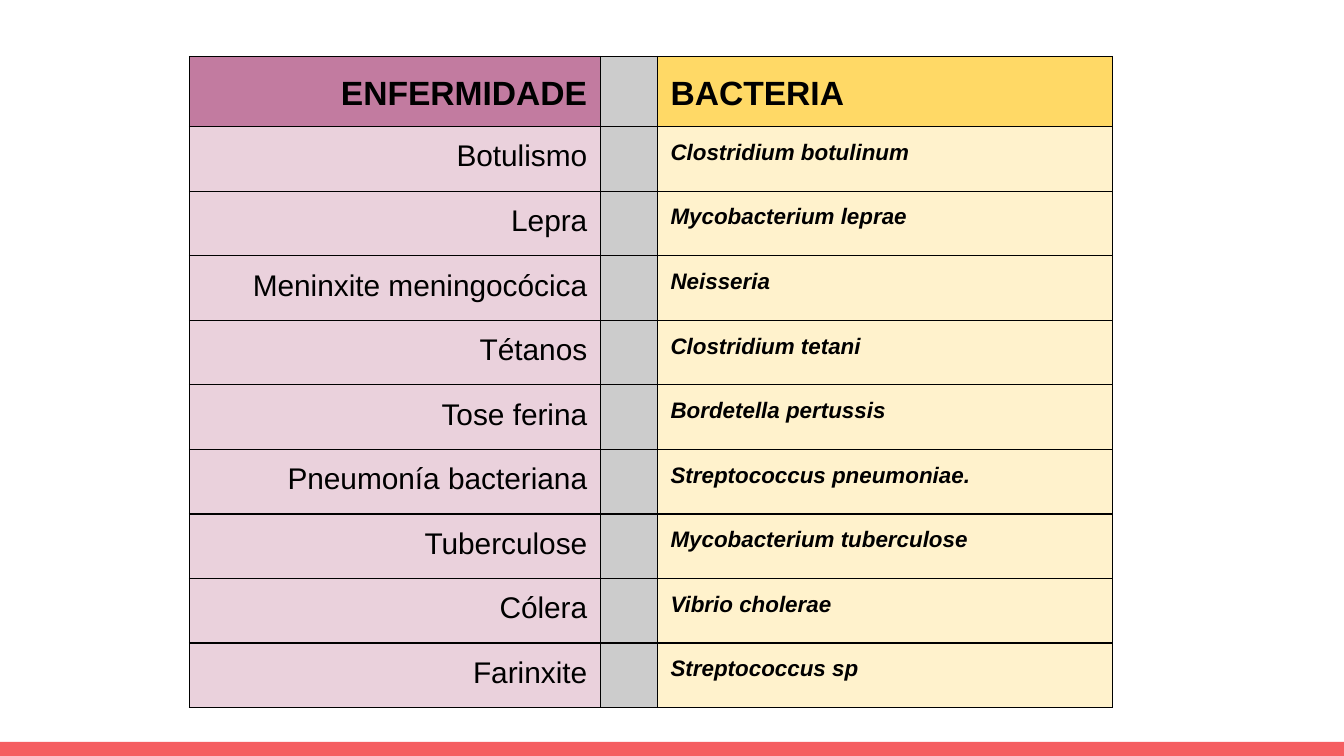
from dataclasses import dataclass

from lxml import etree
from pptx import Presentation
from pptx.dml.color import RGBColor
from pptx.enum.shapes import MSO_SHAPE
from pptx.enum.text import PP_ALIGN
from pptx.oxml.ns import qn
from pptx.util import Inches, Pt

RECT = MSO_SHAPE.RECTANGLE
LEFT, RIGHT = PP_ALIGN.LEFT, PP_ALIGN.RIGHT

HEADER = ("ENFERMIDADE", "", "BACTERIA")
DISEASES = [
    ("Botulismo", "Clostridium botulinum"),
    ("Lepra", "Mycobacterium leprae"),
    ("Meninxite meningocócica", "Neisseria"),
    ("Tétanos", "Clostridium tetani"),
    ("Tose ferina", "Bordetella pertussis"),
    ("Pneumonía bacteriana", "Streptococcus pneumoniae."),
    ("Tuberculose", "Mycobacterium tuberculose"),
    ("Cólera", "Vibrio cholerae"),
    ("Farinxite", "Streptococcus sp"),
]
COL_WIDTHS = (3.06, 0.42, 3.39)
ROW_HEIGHT = 0.44
TABLE_LEFT, TABLE_TOP = 1.41, 0.42
CELL_MARGIN = 0.1
SLIDE_W = 10
SLIDE_H = SLIDE_W * 9 / 16
BAR_TOP, BAR_H = 5.52, 0.11


@dataclass(frozen=True)
class Theme:
    font: str = "Arial"
    text: str = "000000"
    border: str = "000000"
    border_pt: float = 0.75
    bar: str = "F55E61"
    header_fills: tuple = ("C27BA0", "CCCCCC", "FFD966")
    body_fills: tuple = ("EAD1DC", "CCCCCC", "FFF2CC")
    header_pt: int = 18
    disease_pt: int = 16
    bacteria_pt: int = 12


THEME = Theme()


def set_fill(target, color):
    target.fill.solid()
    target.fill.fore_color.rgb = RGBColor.from_string(color)


def set_borders(cell):
    tc_pr = cell._tc.get_or_add_tcPr()
    for i, side in enumerate(("lnL", "lnR", "lnT", "lnB")):
        ln = etree.Element(qn(f"a:{side}"), w=str(Pt(THEME.border_pt)))
        solid = etree.SubElement(ln, qn("a:solidFill"))
        etree.SubElement(solid, qn("a:srgbClr"), val=THEME.border)
        tc_pr.insert(i, ln)


def set_empty_font(p):
    end = etree.SubElement(p._p, qn("a:endParaRPr"), sz=str(THEME.header_pt * 100))
    for tag in ("latin", "ea", "cs"):
        etree.SubElement(end, qn(f"a:{tag}"), typeface=THEME.font)


def add_run(p, text, size, bold, italic):
    r = p.add_run()
    r.text = text
    r.font.name = THEME.font
    r.font.size = Pt(size)
    r.font.bold = bold
    r.font.italic = italic
    r.font.color.rgb = RGBColor.from_string(THEME.text)


def fill_cell(cell, text, row, col):
    header = row == 0
    fills = THEME.header_fills if header else THEME.body_fills
    set_fill(cell, fills[col])
    set_borders(cell)
    cell.margin_left = cell.margin_right = Inches(CELL_MARGIN)
    cell.margin_top = cell.margin_bottom = Inches(CELL_MARGIN)
    p = cell.text_frame.paragraphs[0]
    if not text:
        set_empty_font(p)
        return
    p.alignment = RIGHT if col == 0 else LEFT
    if header:
        p.line_spacing = 1.15
        add_run(p, text, THEME.header_pt, True, False)
    elif col == 0:
        add_run(p, text, THEME.disease_pt, False, False)
    else:
        add_run(p, text, THEME.bacteria_pt, True, True)


def add_bar(s):
    sp = s.shapes.add_shape(RECT, 0, Inches(BAR_TOP), Inches(SLIDE_W), Inches(BAR_H))
    sp.shadow.inherit = False
    set_fill(sp, THEME.bar)
    sp.line.fill.background()


def add_disease_table(s):
    rows = [HEADER] + [(disease, "", bacteria) for disease, bacteria in DISEASES]
    table = s.shapes.add_table(
        len(rows), len(COL_WIDTHS), Inches(TABLE_LEFT), Inches(TABLE_TOP),
        Inches(sum(COL_WIDTHS)), Inches(ROW_HEIGHT * len(rows))).table
    table.first_row = table.horz_banding = False
    for column, width in zip(table.columns, COL_WIDTHS):
        column.width = Inches(width)
    for i, texts in enumerate(rows):
        table.rows[i].height = Inches(ROW_HEIGHT)
        for j, text in enumerate(texts):
            fill_cell(table.cell(i, j), text, i, j)


def main():
    prs = Presentation()
    prs.slide_width, prs.slide_height = Inches(SLIDE_W), Inches(SLIDE_H)
    s = prs.slides.add_slide(prs.slide_layouts[6])
    add_bar(s)
    add_disease_table(s)
    prs.save("out.pptx")


if __name__ == "__main__":
    main()
